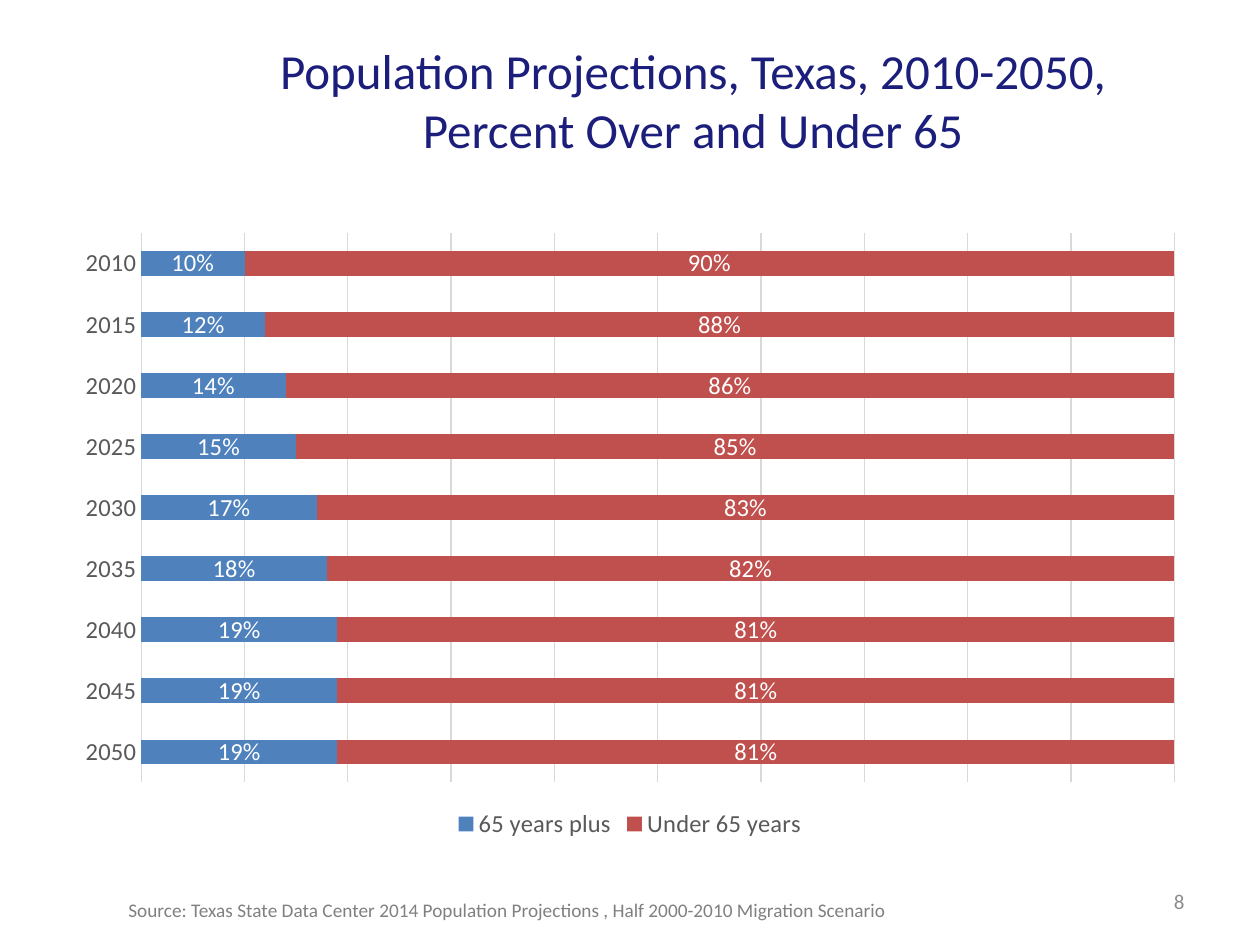
"""Build a slide of Texas population shares over and under 65."""
import pptx
import pptx.chart.data
import pptx.dml.color
import pptx.enum.chart
import pptx.enum.text
import pptx.util

Inches = pptx.util.Inches
Pt = pptx.util.Pt
RGBColor = pptx.dml.color.RGBColor
Align = pptx.enum.text.PP_ALIGN
Anchor = pptx.enum.text.MSO_ANCHOR

NAVY = RGBColor(0x1B, 0x1E, 0x7A)
BLUE = RGBColor(0x4F, 0x81, 0xBD)
RED = RGBColor(0xC0, 0x50, 0x4D)
WHITE = RGBColor(0xFF, 0xFF, 0xFF)
DARK_GRAY = RGBColor(0x59, 0x59, 0x59)
MID_GRAY = RGBColor(0x80, 0x80, 0x80)
PAGE_GRAY = RGBColor(0x8C, 0x8C, 0x8C)
GRID_GRAY = RGBColor(0xD9, 0xD9, 0xD9)


class SlideBuilder:
    font_name = "Calibri"
    chart_size = 14

    def __init__(self, slide):
        self.slide = slide

    def style_font(self, font, size, color):
        font.name = self.font_name
        font.size = Pt(size)
        font.color.rgb = color

    def style_line(self, line):
        line.color.rgb = GRID_GRAY
        line.width = Pt(0.75)

    def text(self, content, box, size, color, align=Align.LEFT, anchor=Anchor.TOP):
        frame = self.slide.shapes.add_textbox(*map(Inches, box)).text_frame
        frame.word_wrap = True
        frame.vertical_anchor = anchor
        frame.text = content
        paragraph = frame.paragraphs[0]
        paragraph.alignment = align
        for run in paragraph.runs:
            self.style_font(run.font, size, color)

    def share_chart(self, categories, shares, box):
        data = pptx.chart.data.CategoryChartData(number_format="0%")
        data.categories = categories
        for name, values, _ in shares:
            data.add_series(name, values)
        chart = self.slide.shapes.add_chart(
            pptx.enum.chart.XL_CHART_TYPE.BAR_STACKED_100, *map(Inches, box), data
        ).chart
        chart.has_title = False
        self.style_font(chart.font, self.chart_size, DARK_GRAY)
        self.format_axes(chart)

        chart.has_legend = True
        chart.legend.position = pptx.enum.chart.XL_LEGEND_POSITION.BOTTOM
        chart.legend.include_in_layout = False
        self.style_font(chart.legend.font, self.chart_size, DARK_GRAY)

        plot = chart.plots[0]
        plot.gap_width = 150
        plot.overlap = 100
        plot.vary_by_categories = False
        for series, (_, _, color) in zip(plot.series, shares):
            series.format.fill.solid()
            series.format.fill.fore_color.rgb = color
            labels = series.data_labels
            labels.show_value = True
            labels.number_format = "0%"
            labels.number_format_is_linked = False
            self.style_font(labels.font, self.chart_size, WHITE)

    def format_axes(self, chart):
        years = chart.category_axis
        years.reverse_order = True
        years.major_tick_mark = pptx.enum.chart.XL_TICK_MARK.NONE
        self.style_font(years.tick_labels.font, self.chart_size, DARK_GRAY)
        self.style_line(years.format.line)
        percent = chart.value_axis
        percent.visible = False
        percent.minimum_scale, percent.maximum_scale = 0, 1
        percent.major_unit = 0.1
        percent.has_major_gridlines = True
        self.style_line(percent.major_gridlines.format.line)


def main():
    presentation = pptx.Presentation()
    presentation.slide_width = Inches(10)
    presentation.slide_height = Inches(7.5)
    builder = SlideBuilder(
        presentation.slides.add_slide(presentation.slide_layouts[6])
    )
    builder.text(
        "Population Projections, Texas, 2010-2050,\vPercent Over and Under 65",
        (1.75, 0.25, 7.5, 1.08), 28, NAVY, Align.CENTER, Anchor.MIDDLE,
    )
    builder.text(
        "8", (7.17, 6.95, 2.33, 0.4), 12, PAGE_GRAY, Align.RIGHT, Anchor.MIDDLE
    )
    years = [str(year) for year in range(2010, 2051, 5)]
    older = [0.10, 0.12, 0.14, 0.15, 0.17, 0.18, 0.19, 0.19, 0.19]
    younger = [round(1 - share, 2) for share in older]
    builder.share_chart(
        years,
        [("65 years plus", older, BLUE), ("Under 65 years", younger, RED)],
        (0.5, 1.75, 9, 4.95),
    )
    builder.text(
        "Source: Texas State Data Center 2014 Population Projections , "
        "Half 2000-2010 Migration Scenario",
        (0.92, 7.08, 9.58, 0.29), 11, MID_GRAY,
    )
    presentation.save("out.pptx")


if __name__ == "__main__":
    main()
